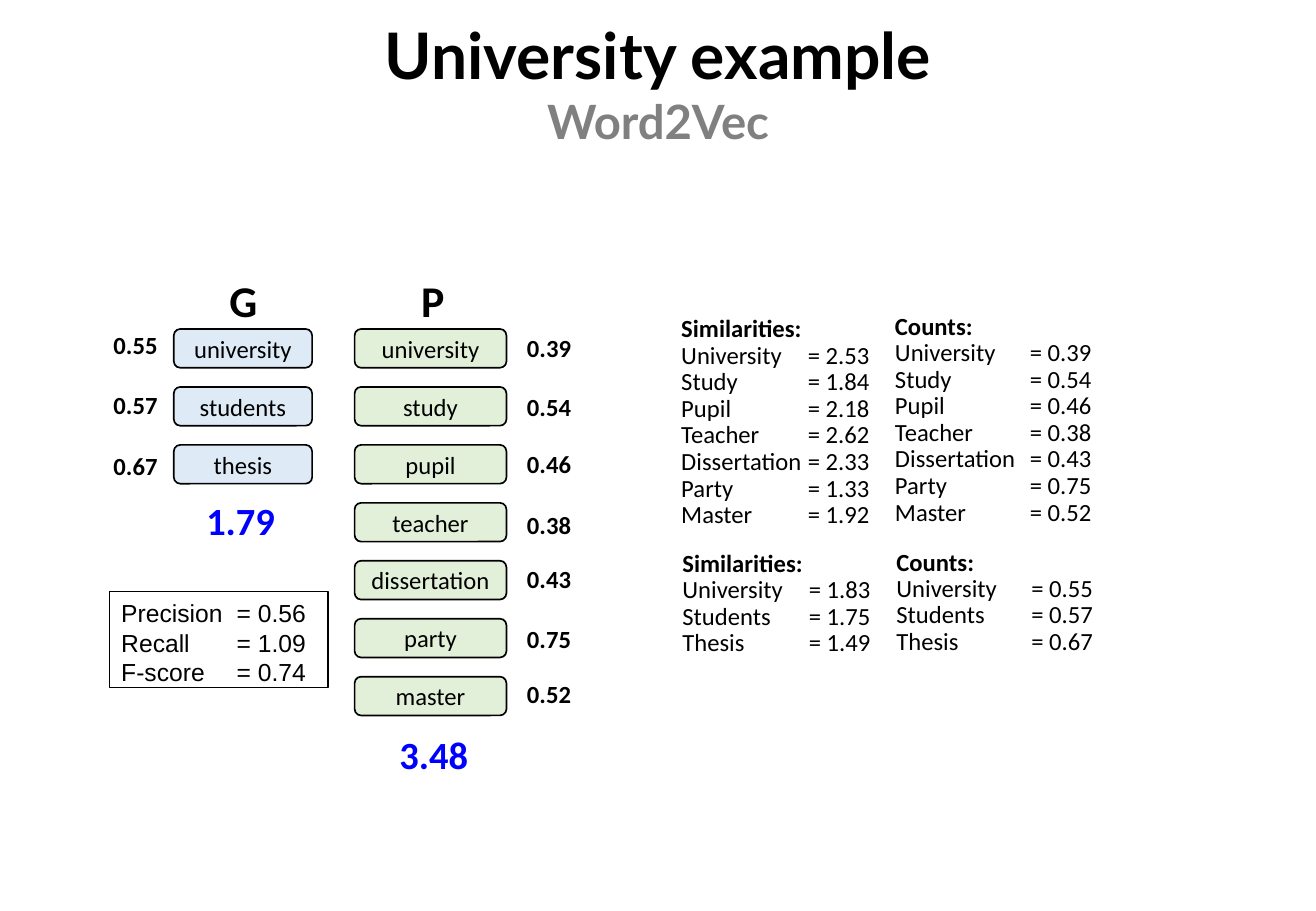
"""Build the slide that scores two keyword sets with Word2Vec similarities."""
from lxml import etree
from pptx import Presentation
from pptx.dml.color import RGBColor
from pptx.enum.shapes import MSO_SHAPE
from pptx.enum.text import MSO_ANCHOR, MSO_AUTO_SIZE, PP_ALIGN
from pptx.oxml.ns import qn
from pptx.util import Pt

PILL = MSO_SHAPE.ROUNDED_RECTANGLE
BOX = MSO_SHAPE.RECTANGLE
MIDDLE = MSO_ANCHOR.MIDDLE
GROW = MSO_AUTO_SIZE.SHAPE_TO_FIT_TEXT
LEFT, CENTER = PP_ALIGN.LEFT, PP_ALIGN.CENTER

COLOURS = {"black": "000000", "grey": "808080", "total": "0000FF",
           "gold": "DEEBF7", "predicted": "E2F0D9"}

FORMATS = {
    "title": {"name": "Lato", "size": Pt(38), "bold": True},
    "subtitle": {"name": "Lato", "size": Pt(28), "bold": True},
    "heading": {"name": "Calibri", "size": Pt(26), "bold": True},
    "total": {"name": "Calibri", "size": Pt(22.8), "bold": True},
    "strong": {"name": "Calibri", "size": Pt(14.6), "bold": True},
    "plain": {"name": "Calibri", "size": Pt(14.6), "bold": False},
    "score": {"name": "Arial", "size": Pt(14.6), "bold": False},
}

LABEL_FRAME = {"word_wrap": False, "auto_size": GROW}
SCORE_FRAME = {"word_wrap": False, "auto_size": GROW, "vertical_anchor": MIDDLE,
               "margin_bottom": Pt(0)}
CENTRED_FRAME = {"word_wrap": True, "vertical_anchor": MIDDLE}

PILL_TOP, PILL_PITCH, PILL_HEIGHT = 195, 34.35, 23

COLUMNS = [
    {"fill": "gold", "left": 103, "width": 82, "value_left": 60.2,
     "rows": [("university", "0.55", 192.2), ("students", "0.57", 227.5),
              ("thesis", "0.67", 263.5)]},
    {"fill": "predicted", "left": 210.2, "width": 90, "value_left": 305.3,
     "rows": [("university", "0.39", 193.7), ("study", "0.54", 229),
              ("pupil", "0.46", 262.8), ("teacher", "0.38", 298.8),
              ("dissertation", "0.43", 330.5), ("party", "0.75", 366.5),
              ("master", "0.52", 398.9)]},
]

LABELS = [
    ("G", (128.9, 158.4, 31.7, 38.9), "heading", "black"),
    ("P", (242.6, 158.4, 28.8, 38.9), "heading", "black"),
    ("1.79", (115.2, 290.9, 55.4, 34.6), "total", "total"),
    ("3.48", (229.7, 429.8, 55.4, 34.6), "total", "total"),
]

PREDICTED_WORDS = ["University", "Study", "Pupil", "Teacher",
                   "Dissertation", "Party", "Master"]
GOLD_WORDS = ["University", "Students", "Thesis"]

LISTS = [
    ("Similarities:", (396.7, 182.2, 126.7, 136.8), 75, PREDICTED_WORDS,
     ["2.53", "1.84", "2.18", "2.62", "2.33", "1.33", "1.92"]),
    ("Counts:", (523.4, 180.7, 131.8, 136.8), 80, PREDICTED_WORDS,
     ["0.39", "0.54", "0.46", "0.38", "0.43", "0.75", "0.52"]),
    ("Similarities:", (397.4, 321.1, 129.6, 72.7), 75, GOLD_WORDS,
     ["1.83", "1.75", "1.49"]),
    ("Counts:", (524.2, 320.4, 135.4, 72.7), 80, GOLD_WORDS,
     ["0.55", "0.57", "0.67"]),
]

SCORES = [("Precision", "0.56"), ("Recall", "1.09"), ("F-score", "0.74")]


def apply(target, values):
    """Set every attribute in values on target."""
    for name, value in values.items():
        setattr(target, name, value)


def colour(name):
    """Return a named colour."""
    return RGBColor.from_string(COLOURS[name])


def add_tab(para, position):
    """Give a paragraph one left tab stop."""
    tabs = etree.SubElement(para._p.get_or_add_pPr(), qn("a:tabLst"))
    etree.SubElement(tabs, qn("a:tab"), pos=str(Pt(position)), algn="l")


def write(frame, lines, align=LEFT, tab=None):
    """Write (text, format, colour, spacing) lines as paragraphs."""
    for index, (text, style, ink, spacing) in enumerate(lines):
        para = frame.add_paragraph() if index else frame.paragraphs[0]
        apply(para, {"alignment": align, "line_spacing": spacing})
        if tab:
            add_tab(para, tab)
        span = para.add_run()
        span.text = text
        apply(span.font, FORMATS[style])
        span.font.color.rgb = colour(ink)


def add_text(page, place, lines, frame_values=LABEL_FRAME, **layout):
    """Add a text box."""
    box = page.shapes.add_textbox(*map(Pt, place))
    apply(box.text_frame, frame_values)
    write(box.text_frame, lines, **layout)


def add_box(page, kind, place, fill, line_width, lines, frame_values, **layout):
    """Add an outlined shape with text."""
    box = page.shapes.add_shape(kind, *map(Pt, place))
    box.shadow.inherit = False
    if fill:
        box.fill.solid()
        box.fill.fore_color.rgb = colour(fill)
    else:
        box.fill.background()
    box.line.color.rgb = colour("black")
    box.line.width = Pt(line_width)
    apply(box.text_frame, frame_values)
    write(box.text_frame, lines, **layout)


def add_column(page, column):
    """Add a stack of word pills with their values alongside."""
    for index, (word, value, value_top) in enumerate(column["rows"]):
        place = (column["left"], PILL_TOP + index * PILL_PITCH,
                 column["width"], PILL_HEIGHT)
        add_box(page, PILL, place, column["fill"], 1,
                [(word, "plain", "black", None)], CENTRED_FRAME, align=CENTER)
        add_text(page, (column["value_left"], value_top, 41, 25.2),
                 [(value, "strong", "black", None)])


def add_list(page, heading, place, tab, words, values):
    """Add a headed list of words and tabbed values."""
    lines = [(heading, "strong", "black", None)]
    lines += [(f"{word}\t= {value}", "plain", "black", 0.9)
              for word, value in zip(words, values)]
    add_text(page, place, lines, tab=tab)


def main():
    """Build and save the deck."""
    deck = Presentation()
    apply(deck, {"slide_width": Pt(780), "slide_height": Pt(540)})
    page = deck.slides.add_slide(deck.slide_layouts[6])
    add_text(page, (13, 20.2, 754, 56.9),
             [("University example", "title", "black", None),
              ("Word2Vec", "subtitle", "grey", None)],
             CENTRED_FRAME, align=CENTER)
    for column in COLUMNS:
        add_column(page, column)
    for text, place, style, ink in LABELS:
        add_text(page, place, [(text, style, ink, None)])
    for entry in LISTS:
        add_list(page, *entry)
    add_box(page, BOX, (64.8, 350.6, 129.6, 56.9), None, 0.75,
            [(f"{name}\t= {value}", "score", "black", None)
             for name, value in SCORES], SCORE_FRAME, tab=68.4)
    deck.save("out.pptx")


if __name__ == "__main__":
    main()
